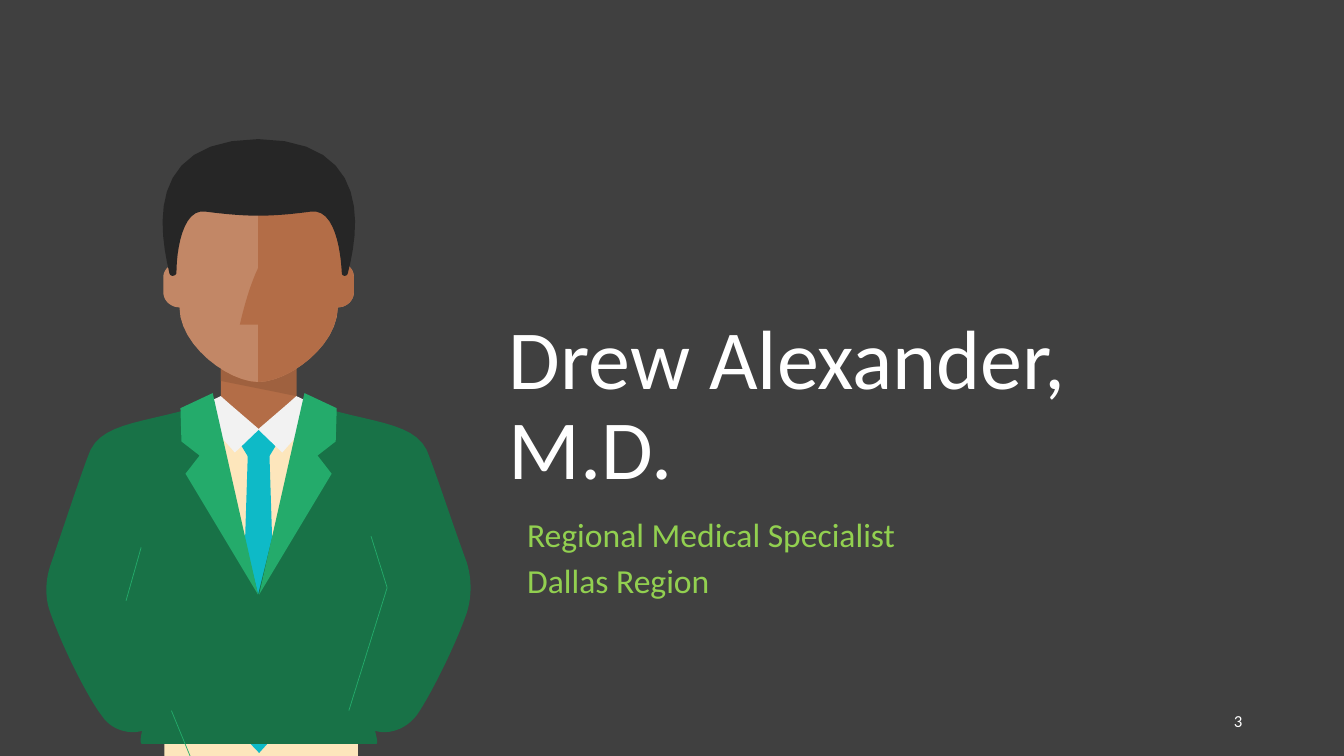
from dataclasses import dataclass

from lxml import etree
from pptx import Presentation
from pptx import util as u
from pptx.dml.color import RGBColor
from pptx.enum import shapes, text
from pptx.oxml import ns


@dataclass(frozen=True)
class Theme:
    font: str = "Calibri"
    title_size: int = 60
    body_size: int = 24
    number_size: int = 12
    background: str = "404040"
    white: str = "FFFFFF"
    lime: str = "92D050"
    skin: str = "B36D47"
    skin_light: str = "C28766"
    skin_shadow: str = "9F613F"
    hair: str = "262626"
    shirt: str = "FDE6BC"
    collar: str = "F2F2F2"
    tie: str = "0EBAC7"
    jacket: str = "187247"
    lapel: str = "24AB6B"


CENTER_X = 2.565
CURVE_STEPS = 12

NECK = [(3.06, 4.01), (2.94, 3.95), (2.94, 3.57), (2.19, 3.57), (2.19, 3.95), (2.07, 4),
        (2.1, 4.99), (2.19, 4.99), (2.19, 5.15), (2.94, 5.15), (2.94, 4.99), (3.03, 4.99)]
NECK_SHADOW = [(2.94, 3.66), (2.81, 3.74, 2.67, 3.79, 2.56, 3.79),
               (2.45, 3.79, 2.32, 3.74, 2.19, 3.66), (2.19, 3.78), (2.94, 3.93)]
SHIRT = [(3.07, 4.01), (3.04, 4.1), (2.99, 4.24, 2.87, 4.45, 2.58, 4.45),
         (2.24, 4.45, 2.11, 4.18, 2.08, 4.06), (2.06, 4.01),
         (1.45, 4.22, 1.64, 6.02, 1.64, 6.02), (1.63, 7.51), (3.55, 7.51), (3.53, 6.02),
         (3.53, 6.02, 3.68, 4.22, 3.07, 4.01)]
TIE_KNOT = [(2.75, 4.4), (2.67, 4.53), (2.46, 4.53), (2.38, 4.4), (2.57, 4.26)]
COLLAR = [(2.57, 4.26), (2.33, 4.49), (1.94, 4.05), (2.19, 3.93), (2.28, 4.01)]
TIE = [(2.67, 4.44), (2.76, 7.26), (2.57, 7.47), (2.37, 7.26), (2.46, 4.44)]
JACKET = [(4.63, 6.08), (4.68, 5.92, 4.68, 5.74, 4.63, 5.58),
          (4.51, 5.26, 4.29, 4.59, 4.23, 4.46), (4.09, 4.18, 3.64, 4.19, 3.09, 4.01),
          (3.03, 3.99), (2.99, 4.17, 2.56, 5.9, 2.56, 5.9),
          (2.56, 5.9, 2.13, 4.17, 2.1, 3.99), (2.04, 4.01),
          (1.48, 4.19, 1.04, 4.18, 0.9, 4.46), (0.84, 4.59, 0.62, 5.26, 0.51, 5.58),
          (0.45, 5.74, 0.44, 5.92, 0.5, 6.08), (0.63, 6.45, 0.89, 6.95, 1.01, 7.1),
          (1.1, 7.24, 1.28, 7.29, 1.41, 7.25), (1.39, 7.33, 1.39, 7.38, 1.41, 7.38),
          (3.73, 7.38), (3.75, 7.38, 3.74, 7.33, 3.72, 7.25),
          (3.85, 7.29, 4.02, 7.24, 4.13, 7.1), (4.24, 6.95, 4.5, 6.45, 4.63, 6.08)]
LAPEL = [(1.79, 4.05), (1.8, 4.38), (1.98, 4.52), (1.84, 4.7), (2.56, 5.9), (2.11, 3.9)]
HEAD = [(3.39, 2.61), (3.41, 2.29), (3.41, 1.89, 3, 1.56, 2.56, 1.56),
        (2.13, 1.56, 1.72, 1.89, 1.72, 2.29), (1.74, 2.6),
        (1.72, 2.61, 1.7, 2.62, 1.68, 2.64), (1.65, 2.66, 1.62, 2.7, 1.62, 2.75),
        (1.62, 2.9), (1.62, 2.98, 1.69, 3.05, 1.78, 3.05),
        (1.78, 3.43, 2.27, 3.79, 2.56, 3.79), (2.86, 3.79, 3.35, 3.43, 3.35, 3.05),
        (3.44, 3.05, 3.51, 2.98, 3.51, 2.9), (3.51, 2.75),
        (3.51, 2.68, 3.46, 2.62, 3.39, 2.61)]
HEAD_SHADE = [(2.56, 1.56), (2.56, 2.66), (2.45, 2.89, 2.38, 3.22, 2.38, 3.22),
              (2.56, 3.22), (2.56, 3.79), (2.83, 3.79, 3.24, 3.51, 3.33, 3.18),
              (3.34, 3.13, 3.35, 3.1, 3.35, 3.05), (3.44, 3.05, 3.51, 2.98, 3.51, 2.9),
              (3.51, 2.75), (3.51, 2.68, 3.46, 2.62, 3.39, 2.61), (3.41, 2.29),
              (3.41, 1.89, 3, 1.56, 2.56, 1.56)]
HAIR = [(2.56, 1.38), (1.41, 1.39, 1.59, 2.32, 1.68, 2.71),
        (1.69, 2.75, 1.74, 2.74, 1.75, 2.71), (1.75, 2.49, 1.81, 2.06, 2.04, 2.1),
        (2.27, 2.13, 2.44, 2.14, 2.56, 2.14), (2.69, 2.14, 2.86, 2.13, 3.08, 2.1),
        (3.32, 2.06, 3.38, 2.49, 3.39, 2.71), (3.39, 2.74, 3.44, 2.75, 3.45, 2.71),
        (3.55, 2.32, 3.72, 1.39, 2.56, 1.38)]
SLEEVE_CREASES = [(1.7, 7.05, 2.19, 8.24), (1.25, 5.96, 1.4, 5.43),
                  (3.84, 5.83, 3.46, 7.05), (3.84, 5.83, 3.68, 5.32)]


def mirrored(outline):
    return [(2 * CENTER_X - x, y) for x, y in outline]


def flattened(outline):
    points = [outline[0]]
    for segment in outline[1:]:
        if len(segment) == 2:
            points.append(segment)
            continue
        x0, y0 = points[-1]
        x1, y1, x2, y2, x3, y3 = segment
        for step in range(1, CURVE_STEPS + 1):
            t = step / CURVE_STEPS
            a, b, c, d = (1 - t) ** 3, 3 * t * (1 - t) ** 2, 3 * t * t * (1 - t), t ** 3
            points.append((a * x0 + b * x1 + c * x2 + d * x3,
                           a * y0 + b * y1 + c * y2 + d * y3))
    return [(u.Inches(x), u.Inches(y)) for x, y in points]


def add_run(p, content, *, font, size, color):
    r = p.add_run()
    r.text = content
    r.font.name = font
    r.font.size = u.Pt(size)
    r.font.color.rgb = RGBColor.from_string(color)


class SlideBuilder:
    def __init__(self, prs, theme):
        self.theme = theme
        self.s = prs.slides.add_slide(prs.slide_layouts[6])
        fill = self.s.background.fill
        fill.solid()
        fill.fore_color.rgb = RGBColor.from_string(theme.background)

    def text_box(self, box, lines, *, size, color, anchor=text.MSO_ANCHOR.TOP,
                 align=text.PP_ALIGN.LEFT, spacing=1.0):
        sp = self.s.shapes.add_textbox(*map(u.Inches, box))
        tf = sp.text_frame
        tf.word_wrap = True
        tf.vertical_anchor = anchor
        for i, line in enumerate(lines):
            p = tf.add_paragraph() if i else tf.paragraphs[0]
            p.alignment = align
            p.line_spacing = spacing
            add_run(p, line, font=self.theme.font, size=size, color=color)

    def group(self):
        return self.s.shapes.add_group_shape()

    def outline(self, group, outline, color):
        start, *rest = flattened(outline)
        builder = group.shapes.build_freeform(*start)
        builder.add_line_segments(rest, close=True)
        sp = builder.convert_to_shape()
        sp.shadow.inherit = False
        sp.fill.solid()
        sp.fill.fore_color.rgb = RGBColor.from_string(color)
        sp.line.fill.background()

    def line(self, group, ends, color, width):
        sp = group.shapes.add_connector(shapes.MSO_CONNECTOR.STRAIGHT, *map(u.Inches, ends))
        sp.line.color.rgb = RGBColor.from_string(color)
        sp.line.width = u.Pt(width)
        etree.SubElement(sp._element.spPr, ns.qn("a:effectLst"))


def main():
    prs = Presentation()
    prs.slide_width, prs.slide_height = u.Inches(13.33), u.Inches(7.5)
    theme = Theme()
    slide = SlideBuilder(prs, theme)

    slide.text_box((9.42, 6.95, 3, 0.4), ["3"], size=theme.number_size, color=theme.white,
                   anchor=text.MSO_ANCHOR.MIDDLE, align=text.PP_ALIGN.RIGHT)
    slide.text_box((4.95, 1.87, 7.46, 3.12), ["Drew Alexander, M.D."], size=theme.title_size,
                   color=theme.white, anchor=text.MSO_ANCHOR.BOTTOM, spacing=0.9)
    slide.text_box((5.13, 4.99, 6.96, 1.64), ["Regional Medical Specialist", "Dallas Region"],
                   size=theme.body_size, color=theme.lime, spacing=1.14)

    doctor = slide.group()
    for outline, color in [
        (NECK, theme.skin), (NECK_SHADOW, theme.skin_shadow), (SHIRT, theme.shirt),
        (TIE_KNOT, theme.tie), (COLLAR, theme.collar), (mirrored(COLLAR), theme.collar),
        (TIE, theme.tie), (JACKET, theme.jacket), (LAPEL, theme.lapel),
        (mirrored(LAPEL), theme.lapel), (HEAD, theme.skin_light),
        (HEAD_SHADE, theme.skin), (HAIR, theme.hair),
    ]:
        slide.outline(doctor, outline, color)
    for ends in SLEEVE_CREASES:
        slide.line(doctor, ends, theme.lapel, 0.5)

    prs.save("out.pptx")


if __name__ == "__main__":
    main()
